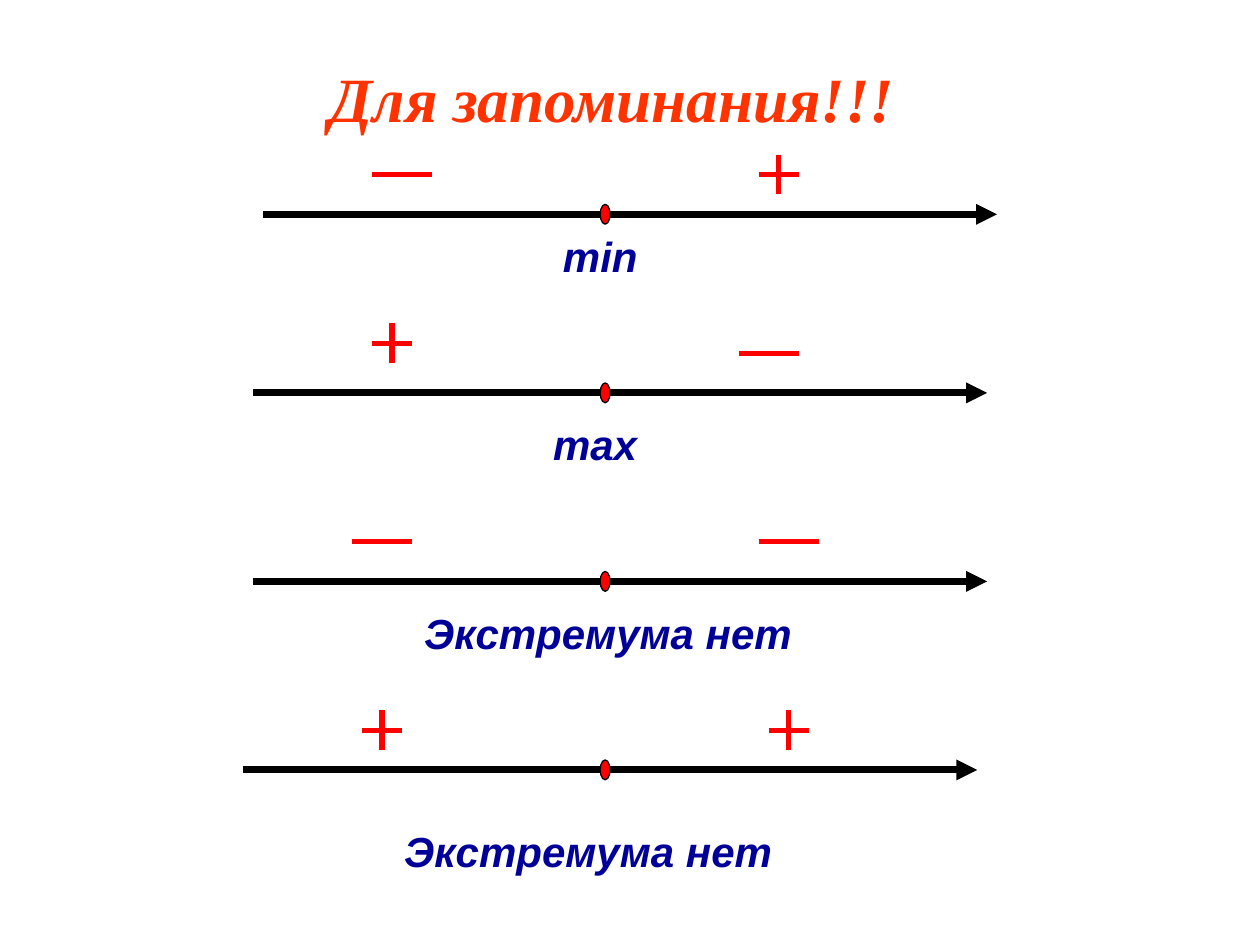
import pptx
import pptx.util
import pptx.dml.color
import pptx.enum.shapes
import pptx.enum.text
import pptx.oxml.ns
import pptx.oxml.xmlchemy

COLORS = {"axis": "000000", "sign": "FF0000", "label": "000099", "title": "FF3300"}
CELL = 10 / 127

ROWS = [
    {"row": 21.6, "start": 26.5, "signs": [("-", 40.5, 17.6), ("+", 78.5, 17.6)],
     "label": ("min", 55.5, 22.6, 14)},
    {"row": 39.6, "start": 25.5, "signs": [("+", 39.5, 34.6), ("-", 77.5, 35.6)],
     "label": ("max", 54.5, 41.6, 14)},
    {"row": 58.6, "start": 25.5, "signs": [("-", 38.5, 54.6), ("-", 79.5, 54.6)],
     "label": ("Экстремума нет", 41.5, 60.6, 44)},
    {"row": 77.6, "start": 24.5, "signs": [("+", 38.5, 73.6), ("+", 79.5, 73.6)],
     "label": ("Экстремума нет", 39.5, 82.6, 44)},
]


def grid(cells):
    """Turn a number of grid cells into a length."""
    return pptx.util.Inches(cells * CELL)


def color(name):
    """Look up a palette colour."""
    return pptx.dml.color.RGBColor.from_string(COLORS[name])


def write(frame, text, *, size, font, tint, align):
    """Put one bold italic paragraph into a text frame."""
    para = frame.paragraphs[0]
    para.alignment = align
    para.space_before = pptx.util.Pt(0)
    span = para.add_run()
    span.text = text
    span.font.size = pptx.util.Pt(size)
    span.font.name = font
    span.font.bold = span.font.italic = True
    span.font.color.rgb = color(tint)


class SignChart:
    """Draws number lines with derivative signs on one slide."""

    def __init__(self, deck):
        """Add a title-only slide to the deck."""
        self.page = deck.slides.add_slide(deck.slide_layouts[5])

    def title(self, text, left, top, width, height):
        """Place and format the title placeholder."""
        box = self.page.shapes.title
        box.left, box.top, box.width, box.height = map(grid, (left, top, width, height))
        box.text_frame.vertical_anchor = pptx.enum.text.MSO_ANCHOR.MIDDLE
        write(box.text_frame, text, size=36, font="Times New Roman", tint="title",
              align=pptx.enum.text.PP_ALIGN.CENTER)

    def line(self, start, end, tint, weight, arrow=False):
        """Draw a straight line, with an arrowhead if asked."""
        link = self.page.shapes.add_connector(
            pptx.enum.shapes.MSO_CONNECTOR.STRAIGHT, *map(grid, (*start, *end)))
        link.line.color.rgb = color(tint)
        link.line.width = pptx.util.Pt(weight)
        properties = link._element.spPr
        if arrow:
            head = pptx.oxml.xmlchemy.OxmlElement("a:tailEnd")
            head.set("type", "triangle")
            properties.find(pptx.oxml.ns.qn("a:ln")).append(head)
        properties.append(pptx.oxml.xmlchemy.OxmlElement("a:effectLst"))

    def axis(self, start, row):
        """Draw a number line with its critical point."""
        self.line((start, row), (start + 74, row), "axis", 4, arrow=True)
        dot = self.page.shapes.add_shape(
            pptx.enum.shapes.MSO_SHAPE.OVAL, *map(grid, (60.5, row - 1, 1, 2)))
        dot.shadow.inherit = False
        dot.fill.solid()
        dot.fill.fore_color.rgb = color("sign")
        dot.line.color.rgb = color("axis")
        dot.line.width = pptx.util.Pt(0.75)

    def sign(self, kind, column, row):
        """Draw a plus or a minus around its centre."""
        reach = 2 if kind == "+" else 3
        self.line((column - reach, row), (column + reach, row), "sign", 3)
        if kind == "+":
            self.line((column, row - reach), (column, row + reach), "sign", 3)

    def label(self, text, column, row, width):
        """Write the conclusion under a number line."""
        box = self.page.shapes.add_textbox(*map(grid, (column, row, width, 6.4)))
        box.text_frame.word_wrap = True
        box.text_frame.auto_size = pptx.enum.text.MSO_AUTO_SIZE.SHAPE_TO_FIT_TEXT
        write(box.text_frame, text, size=24, font="Arial", tint="label",
              align=pptx.enum.text.PP_ALIGN.LEFT)


def main():
    """Build the slide and save it."""
    deck = pptx.Presentation()
    deck.slide_width = pptx.util.Inches(10)
    deck.slide_height = pptx.util.Inches(7.5)
    chart = SignChart(deck)
    chart.title("Для запоминания!!!", 6.7, 4.3, 110, 11)
    for item in ROWS:
        chart.axis(item["start"], item["row"])
        for sign in item["signs"]:
            chart.sign(*sign)
        chart.label(*item["label"])
    deck.save("out.pptx")


if __name__ == "__main__":
    main()
